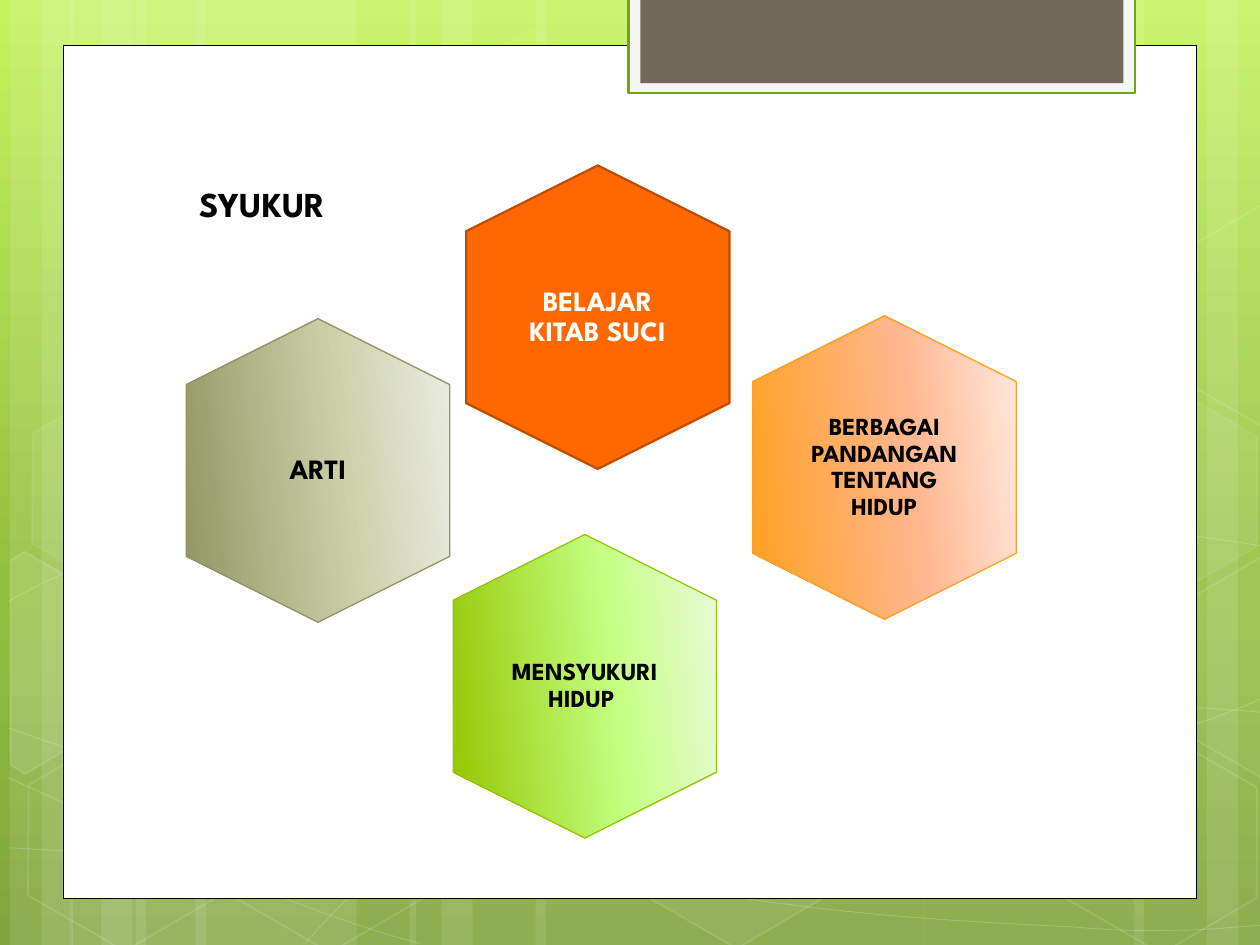
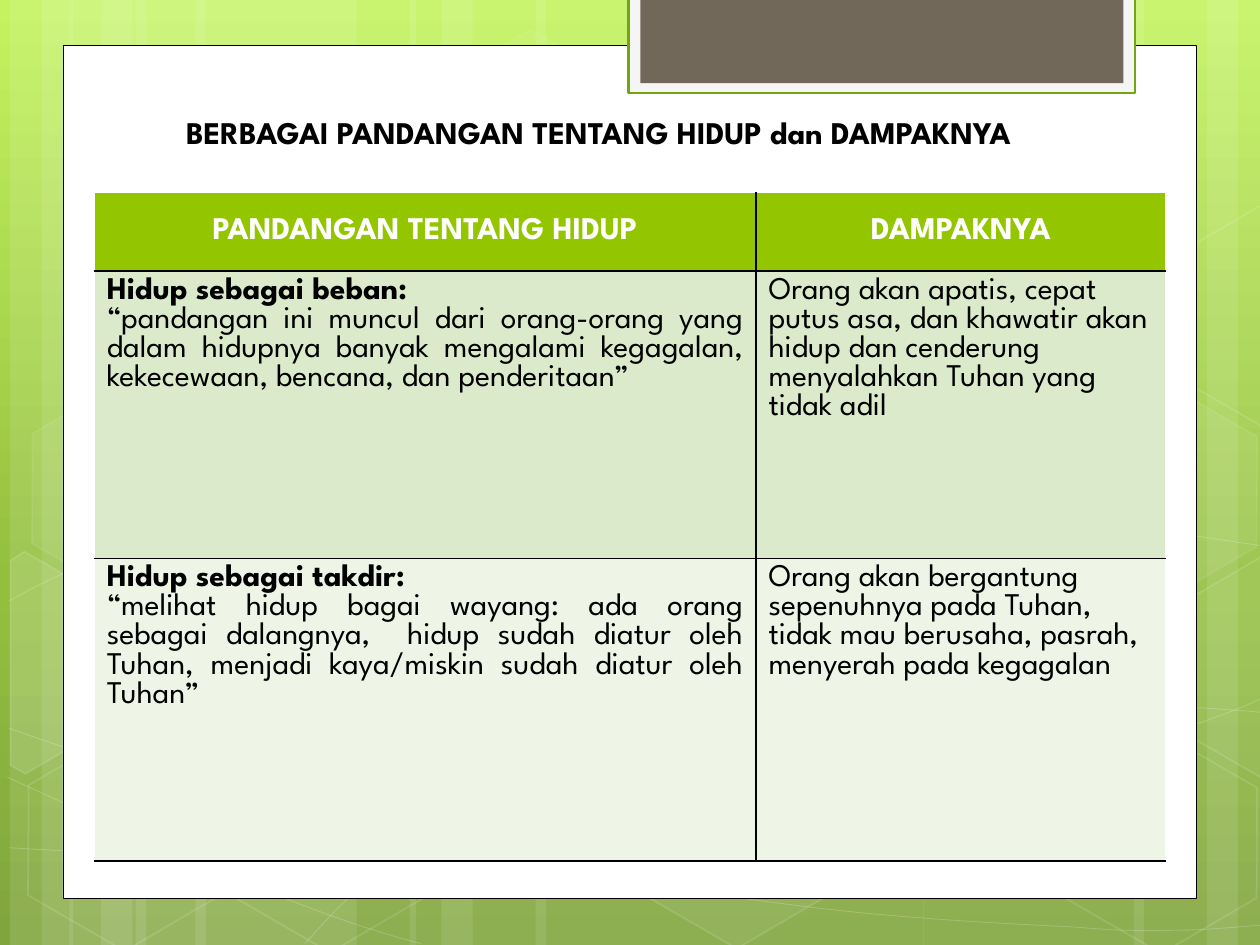
from dataclasses import dataclass
from typing import NamedTuple, Optional

from lxml.etree import SubElement
from pptx import Presentation
from pptx.dml.color import RGBColor
from pptx.enum.shapes import MSO_SHAPE
from pptx.enum.text import MSO_ANCHOR, MSO_AUTO_SIZE, PP_ALIGN
from pptx.oxml.ns import qn
from pptx.util import Cm, Pt

FONT = "League Spartan"
WHITE = RGBColor(0xFF, 0xFF, 0xFF)
BLACK = RGBColor(0x00, 0x00, 0x00)
GREEN = RGBColor(0x94, 0xC6, 0x00)
DARK_GREEN = RGBColor(0x74, 0xA5, 0x10)
LIGHT_GRAY = RGBColor(0xF5, 0xF5, 0xF5)
BROWN = RGBColor(0x71, 0x68, 0x5A)
ORANGE = RGBColor(0xFF, 0x67, 0x00)
DARK_ORANGE = RGBColor(0xBD, 0x4C, 0x00)
AMBER = RGBColor(0xFE, 0xA0, 0x22)
OLIVE = RGBColor(0x90, 0x94, 0x65)
ROW_COLORS = [GREEN, RGBColor(0xDC, 0xEA, 0xCC), RGBColor(0xEE, 0xF5, 0xE7)]


class Gradient(NamedTuple):
    colors: tuple[RGBColor, RGBColor, RGBColor]
    middle: int
    angle: int


BACKGROUND = Gradient((RGBColor(0xC3, 0xF3, 0x5F), RGBColor(0x93, 0xBF, 0x3F),
                       RGBColor(0x81, 0xA5, 0x3E)), 62, 90)
OLIVE_FADE = Gradient((RGBColor(0xEB, 0xEC, 0xE3), RGBColor(0xCD, 0xD1, 0xAB),
                       RGBColor(0x92, 0x96, 0x63)), 40, 84)
AMBER_FADE = Gradient((RGBColor(0xFF, 0xE9, 0xDE), RGBColor(0xFF, 0xB7, 0x8F),
                       RGBColor(0xFF, 0xA0, 0x21)), 40, 84)
GREEN_FADE = Gradient((RGBColor(0xEA, 0xF9, 0xDA), RGBColor(0xC4, 0xFF, 0x82), GREEN), 40, 84)


class Area(NamedTuple):
    left: float
    top: float
    width: float
    height: float

    def lengths(self) -> list[Cm]:
        return [Cm(value) for value in self]


class Paragraph(NamedTuple):
    text: str
    size: int = 18
    color: RGBColor = BLACK
    bold: bool = False
    align: PP_ALIGN = PP_ALIGN.CENTER
    spacing: Optional[float] = None


@dataclass
class Paint:
    fill: Optional[RGBColor | Gradient] = None
    line: Optional[RGBColor] = None
    width: float = 1
    fill_alpha: int = 100
    line_alpha: int = 100


class Hexagon(NamedTuple):
    left: float
    top: float
    fill_alpha: int
    line_alpha: int


class Piece(NamedTuple):
    left: float
    top: float
    corners: list[tuple[float, float]]
    fill_alpha: int


class Curve(NamedTuple):
    knots: list[tuple[float, float]]
    straight: Optional[int] = None


@dataclass
class Topic:
    left: float
    top: float
    text: str
    size: int
    inset: float
    paint: Paint
    color: RGBColor = BLACK


SLIDE_WIDTH, SLIDE_HEIGHT = 25.4, 19.05
STRIPE_GROUPS = [(0.2, 4.45, 1), (1.4, 4.45, 1), (25.6, 4.45, -1), (8.26, 7.82, 1)]
HEXAGONS = [
    Hexagon(8.48, 0.91, 4, 8), Hexagon(12.62, 14.96, 6, 12),
    Hexagon(0.28, 15.01, 0, 12), Hexagon(0.36, 7.92, 7, 8),
    Hexagon(4.42, 15.04, 0, 12), Hexagon(19.13, 11.51, 10, 12),
    Hexagon(21.18, 15.06, 0, 12), Hexagon(21.18, 7.98, 7, 8),
]
LEFT_CORNERS = [(0, 0.3), (0.15, 0), (2.41, 0), (3.5, 1.95), (2.41, 3.87), (2.06, 3.87)]
RIGHT_CORNERS = [(0, 1.92), (1.09, 0), (1.33, 0.01), (3.45, 3.68), (3.35, 3.86), (1.12, 3.86)]
PIECES = [Piece(-0.84, 11.66, LEFT_CORNERS, 10), Piece(23.29, 11.28, RIGHT_CORNERS, 4),
          Piece(23.29, 4.19, RIGHT_CORNERS, 0)]
CURVES = [
    Curve([(0.18, 17.09), (1.55, 17.17), (2.92, 17.25), (4.83, 17.22), (6.73, 17.2),
           (9.09, 17.15), (11.63, 16.89), (14.17, 16.64), (17.78, 16.15), (20.12, 15.67),
           (22.43, 15.19), (24.82, 14.43), (25.58, 14)]),
    Curve([(0.18, 12.12), (0.91, 11.71), (1.65, 11.33), (3.07, 10.95), (4.52, 10.57),
           (6.58, 10.01), (8.81, 9.83), (11.07, 9.65), (13.82, 9.63), (16.61, 9.83),
           (19.41, 10.03), (24.05, 10.82), (25.58, 11.02)]),
    Curve([(0.15, 15.67), (3.23, 17.07), (6.27, 18.47), (8.48, 19.02)]),
    Curve([(0.18, 14.68), (0.97, 14.96), (1.78, 15.24), (3.25, 15.65), (4.72, 16.03),
           (6.93, 16.66), (9.07, 17.09), (11.18, 17.53), (13.84, 17.98), (15.95, 18.24),
           (18.06, 18.52), (20.32, 18.62), (21.67, 18.69), (22.99, 18.8), (23.34, 18.75),
           (24, 18.75), (24.66, 18.72), (25.12, 18.67), (25.58, 18.64)]),
    Curve([(6.15, 19.02), (6.6, 18.52), (7.06, 18.01), (7.67, 17.55), (8.28, 17.09),
           (9.14, 16.59), (9.86, 16.23), (10.57, 15.88), (11, 15.72), (11.94, 15.47),
           (12.85, 15.21), (14.55, 14.86), (15.44, 14.68), (16.36, 14.5), (16.48, 14.5),
           (17.27, 14.45), (18.06, 14.38), (19.3, 14.3), (20.17, 14.27), (21.06, 14.25),
           (22.5, 14.27), (22.5, 14.27), (24.21, 14.27), (24.66, 14.3), (25.1, 14.33),
           (25.32, 14.35), (25.55, 14.38), (25.48, 14.35), (25.55, 14.38)], straight=7),
]
TOPIC_WIDTH, TOPIC_HEIGHT = 6.12, 5.31
LABEL_WIDTH, LABEL_HEIGHT = 3.66, 4.22
TOPICS = [
    Topic(8.99, 3.74, "BELAJAR KITAB SUCI", 16, 0.18, Paint(ORANGE, DARK_ORANGE, 1.25), WHITE),
    Topic(3.35, 6.83, "ARTI", 16, 0, Paint(OLIVE_FADE, OLIVE, 0.75)),
    Topic(14.77, 6.77, "BERBAGAI PANDANGAN TENTANG HIDUP", 14, 0.15,
          Paint(AMBER_FADE, AMBER, 0.75)),
    Topic(8.73, 11.18, "MENSYUKURI HIDUP ", 14, 0, Paint(GREEN_FADE, GREEN, 0.75)),
]
VIEWS = [
    ("Hidup sebagai beban:",
     "“pandangan ini muncul dari orang-orang yang dalam hidupnya banyak mengalami kegagalan, "
     "kekecewaan, bencana, dan penderitaan”",
     "Orang akan apatis, cepat putus asa, dan khawatir akan hidup dan cenderung menyalahkan "
     "Tuhan yang tidak adil"),
    ("Hidup sebagai takdir:",
     "“melihat hidup bagai wayang: ada orang sebagai dalangnya,  hidup sudah diatur oleh Tuhan, "
     "menjadi kaya/miskin sudah diatur oleh Tuhan”",
     "Orang akan bergantung sepenuhnya pada Tuhan, tidak mau berusaha, pasrah, menyerah pada "
     "kegagalan"),
]


def add_color(parent, color: RGBColor, alpha: int = 100) -> None:
    node = SubElement(parent, qn("a:srgbClr"), val=str(color))
    if alpha < 100:
        SubElement(node, qn("a:alpha"), val=str(alpha * 1000))


def set_gradient(fill, element, gradient: Gradient) -> None:
    fill.gradient()
    fill.gradient_angle = 360 - gradient.angle
    stops = next(element.iter(qn("a:gsLst")))
    for stop in list(stops):
        stops.remove(stop)
    for position, color in zip((0, gradient.middle, 100), gradient.colors):
        add_color(SubElement(stops, qn("a:gs"), pos=str(position * 1000)), color)


def set_solid(fill, holder, color: RGBColor, alpha: int) -> None:
    fill.solid()
    fill.fore_color.rgb = color
    solid = holder.find(qn("a:solidFill"))
    solid.remove(solid[0])
    add_color(solid, color, alpha)


def apply_paint(shape, paint: Paint) -> None:
    shape.shadow.inherit = False
    properties = shape.element.spPr
    if isinstance(paint.fill, Gradient):
        set_gradient(shape.fill, properties, paint.fill)
    elif paint.fill is None or paint.fill_alpha == 0:
        shape.fill.background()
    else:
        set_solid(shape.fill, properties, paint.fill, paint.fill_alpha)
    if paint.line is None:
        shape.line.fill.background()
    else:
        shape.line.width = Pt(paint.width)
        set_solid(shape.line.fill, properties.find(qn("a:ln")), paint.line, paint.line_alpha)


def add_figure(page, kind: MSO_SHAPE, area: Area, paint: Paint, rotation: int = 0):
    shape = page.shapes.add_shape(kind, *area.lengths())
    shape.rotation = rotation
    apply_paint(shape, paint)
    return shape


def add_outline(page, points: list, paint: Paint, close: bool):
    corners = [(Cm(x), Cm(y)) for x, y in points]
    builder = page.shapes.build_freeform(*corners[0])
    builder.add_line_segments(corners[1:], close=close)
    shape = builder.convert_to_shape()
    apply_paint(shape, paint)
    return shape


def add_curve(page, curve: Curve) -> None:
    shape = add_outline(page, curve.knots, Paint(None, WHITE, 0.5, line_alpha=20), False)
    outline = next(shape.element.iter(qn("a:path")))
    lines = outline.findall(qn("a:lnTo"))
    segment = 0
    while lines:
        count = 1 if segment == curve.straight else 3
        group, lines = lines[:count], lines[count:]
        kind = "a:lnTo" if count == 1 else "a:cubicBezTo"
        bend = SubElement(outline, qn(kind))
        for line in group:
            bend.append(line[0])
            outline.remove(line)
        segment += 1


def write(frame, *paragraphs: Paragraph) -> None:
    for index, paragraph in enumerate(paragraphs):
        para = frame.add_paragraph() if index else frame.paragraphs[0]
        para.alignment = paragraph.align
        if paragraph.spacing:
            para.line_spacing = paragraph.spacing
        span = para.add_run()
        span.text = paragraph.text
        span.font.name = FONT
        span.font.size = Pt(paragraph.size)
        span.font.bold = paragraph.bold
        span.font.color.rgb = paragraph.color


def set_frame(frame, anchor: MSO_ANCHOR, side: float, edge: float) -> None:
    frame.word_wrap = True
    frame.auto_size = MSO_AUTO_SIZE.NONE
    frame.vertical_anchor = anchor
    frame.margin_left = frame.margin_right = Cm(side)
    frame.margin_top = frame.margin_bottom = Cm(edge)


def add_backdrop(page) -> None:
    for start, broad, direction in STRIPE_GROUPS:
        for offset, width in ((2.54, broad), (0, 1.27), (0.64, 2.11)):
            left = start + offset if direction > 0 else start - offset - width
            add_figure(page, MSO_SHAPE.RECTANGLE, Area(left, 0, width, SLIDE_HEIGHT),
                       Paint(WHITE, fill_alpha=10), 0 if direction > 0 else 180)
    for curve in CURVES:
        add_curve(page, curve)
    for left, top, fill_alpha, line_alpha in HEXAGONS:
        shape = add_figure(page, MSO_SHAPE.HEXAGON, Area(left, top, 4.45, 3.86),
                           Paint(WHITE, WHITE, 1, fill_alpha, line_alpha), 30)
        shape.adjustments[0] = 0.285
    for piece in PIECES:
        points = [(piece.left + x, piece.top + y) for x, y in piece.corners]
        shape = add_outline(page, points, Paint(WHITE, WHITE, 1, piece.fill_alpha, 12), True)
        shape.rotation = 30
    for area, paint in (
        (Area(1.27, 0.91, 22.86, 17.2), Paint(WHITE, BLACK, 0.5)),
        (Area(12.67, -0.05, 10.21, 1.93), Paint(LIGHT_GRAY, DARK_GREEN, 1.25)),
        (Area(12.91, -0.05, 9.74, 1.73), Paint(BROWN)),
    ):
        add_figure(page, MSO_SHAPE.RECTANGLE, area, paint)


def move_to_layout(page, layout) -> None:
    set_gradient(layout.background.fill, layout.element, BACKGROUND)
    for number, shape in enumerate(list(page.shapes), 100):
        if not shape.is_placeholder:
            shape.element.nvSpPr.cNvPr.set("id", str(number))
            layout.shapes.element.append(shape.element)


def add_page(layout, deck, area: Area, title: Paragraph, anchor: MSO_ANCHOR,
             side: float, edge: float):
    page = deck.slides.add_slide(layout)
    box = page.shapes.title
    box.left, box.top, box.width, box.height = area.lengths()
    set_frame(box.text_frame, anchor, side, edge)
    write(box.text_frame, title)
    return page


def add_topic(page, topic: Topic) -> None:
    add_figure(page, MSO_SHAPE.HEXAGON,
               Area(topic.left, topic.top, TOPIC_WIDTH, TOPIC_HEIGHT), topic.paint, 90)
    area = Area(topic.left + (TOPIC_WIDTH - LABEL_WIDTH) / 2,
                topic.top + (TOPIC_HEIGHT - LABEL_HEIGHT) / 2, LABEL_WIDTH, LABEL_HEIGHT)
    box = page.shapes.add_textbox(*area.lengths())
    set_frame(box.text_frame, MSO_ANCHOR.MIDDLE, topic.inset, topic.inset)
    write(box.text_frame, Paragraph(topic.text, topic.size, topic.color, True, spacing=0.9))


def add_borders(cell, row: int, column: int) -> None:
    properties = cell._tc.get_or_add_tcPr()
    colors = {"L": BLACK if column else WHITE, "R": WHITE if column else BLACK,
              "T": BLACK if row else WHITE, "B": BLACK}
    for side, color in colors.items():
        line = SubElement(properties, qn(f"a:ln{side}"), w=str(Pt(1)))
        add_color(SubElement(line, qn("a:solidFill")), color)


def add_views_table(page) -> None:
    heights, widths = (1.58, 5.8, 6.1), (13.34, 8.26)
    area = Area(1.9, 3.88, sum(widths), sum(heights))
    table = page.shapes.add_table(len(heights), len(widths), *area.lengths()).table
    for column, width in zip(table.columns, widths):
        column.width = Cm(width)
    for row, height in zip(table.rows, heights):
        row.height = Cm(height)
    contents = [[[Paragraph(text, color=WHITE, bold=True)]
                 for text in ("PANDANGAN TENTANG HIDUP", "DAMPAKNYA")]]
    for name, view, effect in VIEWS:
        contents.append([[Paragraph(name, bold=True, align=PP_ALIGN.JUSTIFY),
                          Paragraph(view, align=PP_ALIGN.JUSTIFY)],
                         [Paragraph(effect, align=PP_ALIGN.LEFT)]])
    for row, cells in enumerate(contents):
        for column, paragraphs in enumerate(cells):
            cell = table.cell(row, column)
            add_borders(cell, row, column)
            cell.fill.solid()
            cell.fill.fore_color.rgb = ROW_COLORS[row]
            cell.vertical_anchor = MSO_ANCHOR.TOP if row else MSO_ANCHOR.MIDDLE
            write(cell.text_frame, *paragraphs)


def main() -> None:
    deck = Presentation()
    deck.slide_width, deck.slide_height = Cm(SLIDE_WIDTH), Cm(SLIDE_HEIGHT)
    layout = deck.slide_layouts[5]
    page = add_page(layout, deck, Area(1.99, 2.32, 6.6, 3.66),
                    Paragraph("SYUKUR", 20, bold=True, spacing=0.9), MSO_ANCHOR.MIDDLE, 0.2, 0.2)
    add_backdrop(page)
    move_to_layout(page, layout)
    for topic in TOPICS:
        add_topic(page, topic)
    page = add_page(layout, deck, Area(1.49, 2.14, 21.16, 1.02),
                    Paragraph("BERBAGAI PANDANGAN TENTANG HIDUP dan DAMPAKNYA", bold=True),
                    MSO_ANCHOR.TOP, 0.25, 0.13)
    add_views_table(page)
    deck.save("out.pptx")


if __name__ == "__main__":
    main()
